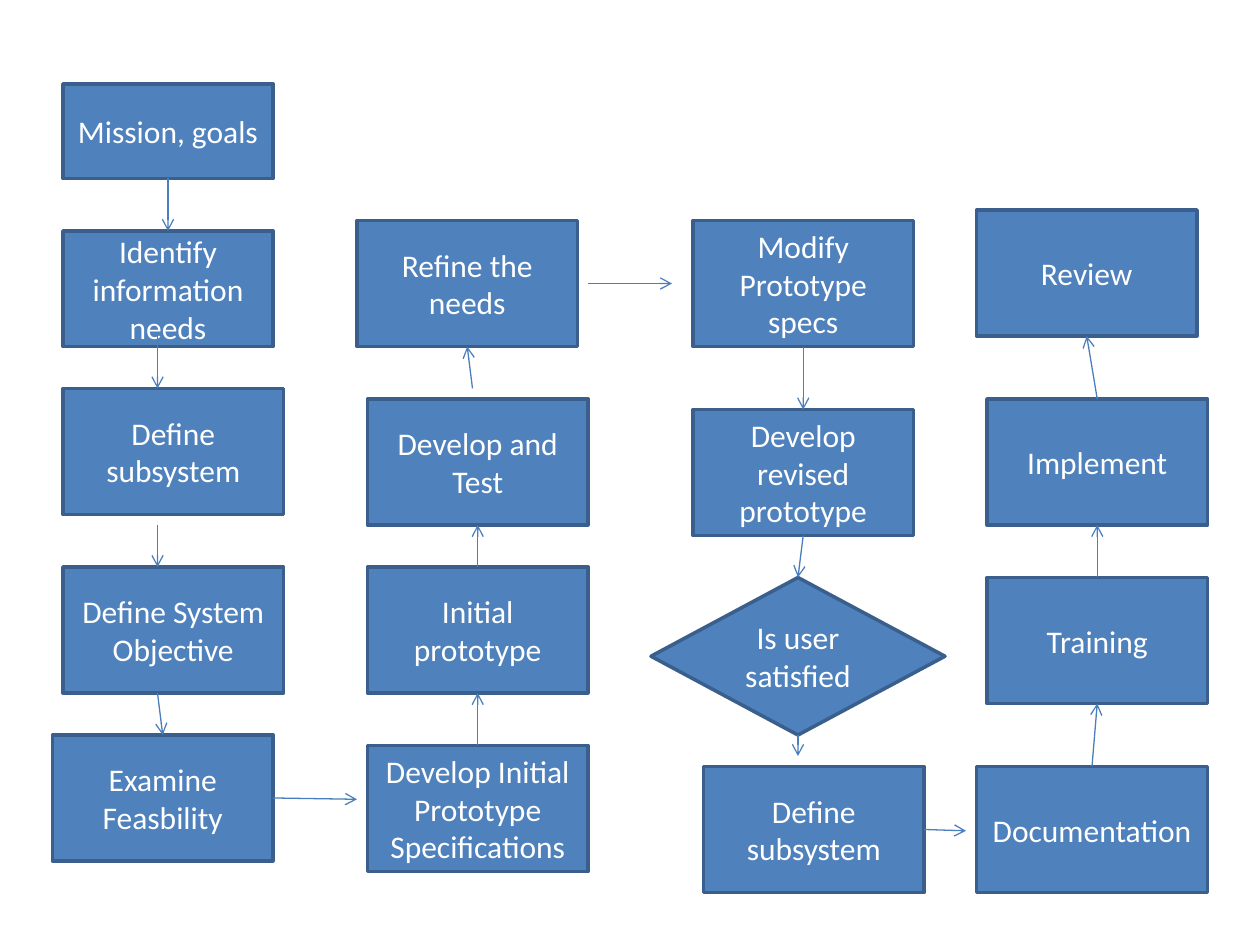
from pptx import Presentation
from pptx.dml.color import RGBColor
from pptx.enum.shapes import MSO_CONNECTOR as Link, MSO_SHAPE as Kind
from pptx.enum.text import MSO_ANCHOR as Anchor, PP_ALIGN as Align
from pptx.oxml.ns import qn
from pptx.util import Pt
from lxml.etree import SubElement as sub

SCALE = 9525  # EMU in one px, at 96 px to the inch


def px(*nums):
    return [n * SCALE for n in nums]


def hue(code):
    return RGBColor.from_string(code)


class Chart:
    """Flow chart style and the slide it is drawn on."""
    font, size = "Calibri", 18
    fill, edge, ink, wire = "4F81BD", "3A5F8C", "FFFFFF", "4B7EBC"

    def __init__(self, slide):
        self.group = slide.shapes.add_group_shape().shapes

    def box(self, text, x, y, w=168, h=96, kind=Kind.RECTANGLE):
        box = self.group.add_shape(kind, *px(x, y, w, h))
        box.shadow.inherit = False
        box.fill.solid()
        box.fill.fore_color.rgb = hue(self.fill)
        box.line.color.rgb = hue(self.edge)
        box.line.width = Pt(2)
        frame = box.text_frame
        frame.word_wrap = True
        frame.vertical_anchor = Anchor.MIDDLE
        para = frame.paragraphs[0]
        para.alignment = Align.CENTER
        run = para.add_run()
        run.text = text
        run.font.name = self.font
        run.font.size = Pt(self.size)
        run.font.color.rgb = hue(self.ink)

    def arrow(self, *ends):
        wire = self.group.add_connector(Link.STRAIGHT, *px(*ends))
        wire.line.color.rgb = hue(self.wire)
        wire.line.width = Pt(0.75)
        props = wire.element.spPr
        sub(props.find(qn("a:ln")), qn("a:tailEnd"), type="arrow")
        sub(props, qn("a:effectLst"))


# Steps: text, left, top and, where not standard, width, height, kind
STEPS = [
    # Goals and scope, downward
    ("Mission, goals", 48, 64, 160, 72),
    ("Identify information needs", 48, 176, 160, 88),
    ("Define subsystem", 48, 296),
    ("Define System Objective", 48, 432),
    ("Examine Feasbility", 40, 560),
    # First prototype, upward
    ("Develop Initial Prototype Specifications", 280, 568),
    ("Initial prototype", 280, 432),
    ("Develop and Test", 280, 304),
    ("Refine the needs", 272, 168),
    # Revision, downward
    ("Modify Prototype specs", 528, 168),
    ("Develop revised prototype", 528, 312),
    ("Define subsystem", 536, 584),
    ("Is user satisfied", 496, 440, 224, 120, Kind.DIAMOND),
    # Delivery, upward
    ("Documentation", 744, 584, 176),
    ("Training", 752, 440),
    ("Implement", 752, 304),
    ("Review", 744, 160),
]

# Arrows: start x, y and end x, y
ARROWS = [
    # Goals and scope
    (128, 136, 128, 176), (120, 256, 120, 296),
    (120, 400, 120, 432), (120, 528, 124, 560),
    (208, 608, 272, 609),
    # First prototype
    (364, 568, 364, 528), (364, 432, 364, 400),
    (360, 296, 356, 264), (448, 216, 512, 216),
    # Revision
    (612, 264, 612, 312), (612, 408, 608, 440),
    (608, 560, 608, 576), (704, 632, 736, 633),
    # Delivery
    (832, 584, 836, 536), (836, 440, 836, 400),
    (836, 304, 828, 256),
]


def main():
    deck = Presentation()
    deck.slide_width, deck.slide_height = px(960, 720)
    chart = Chart(deck.slides.add_slide(deck.slide_layouts[6]))
    for step in STEPS:
        chart.box(*step)
    for ends in ARROWS:
        chart.arrow(*ends)
    deck.save("out.pptx")


if __name__ == "__main__":
    main()
